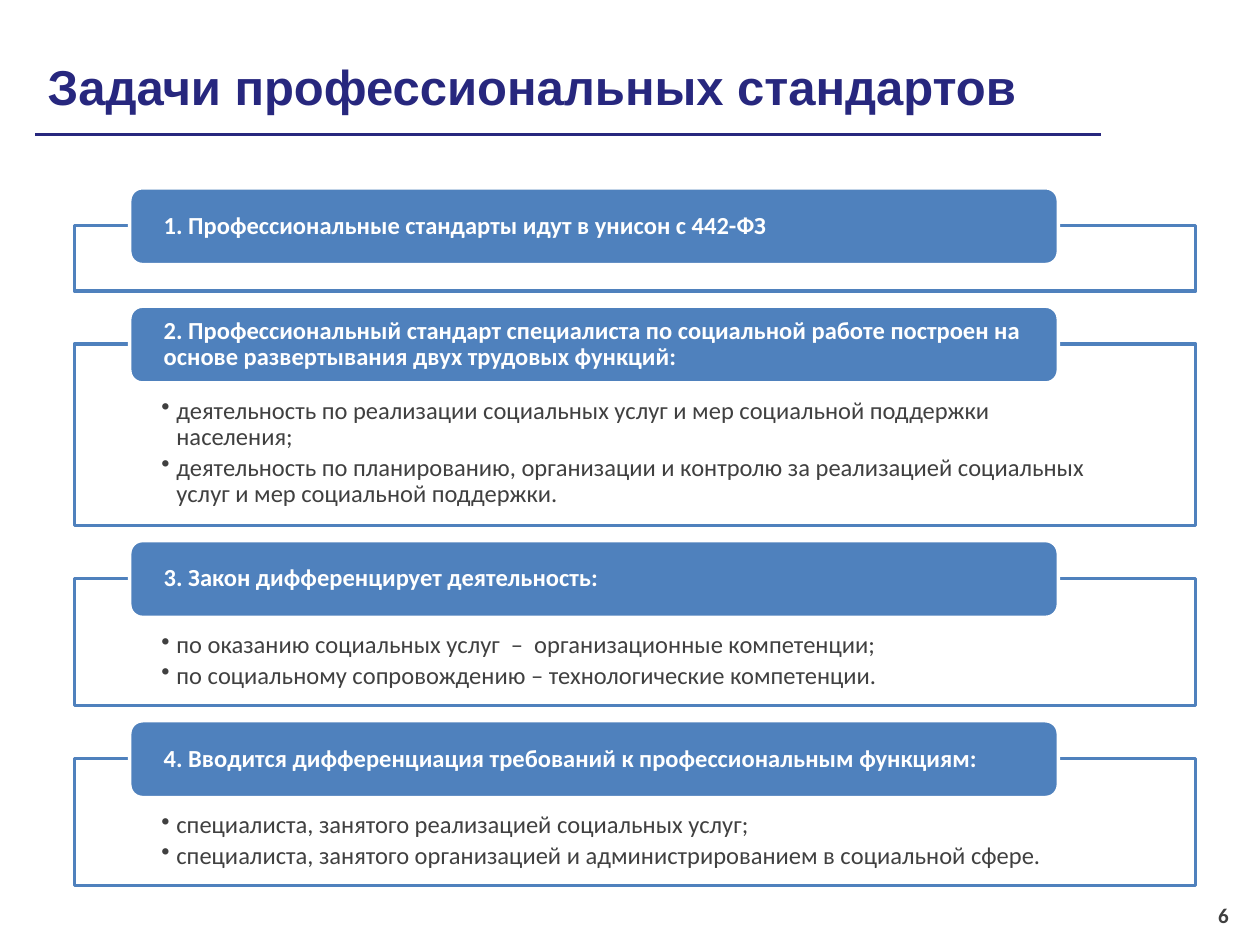
from lxml import etree
from pptx import Presentation
from pptx.dml.color import RGBColor
from pptx.enum.shapes import MSO_CONNECTOR, MSO_SHAPE
from pptx.enum.text import MSO_ANCHOR, PP_ALIGN
from pptx.oxml.ns import qn
from pptx.util import Inches, Pt

RECTANGLE, ROUNDED = MSO_SHAPE.RECTANGLE, MSO_SHAPE.ROUNDED_RECTANGLE
STRAIGHT = MSO_CONNECTOR.STRAIGHT
TOP, MIDDLE = MSO_ANCHOR.TOP, MSO_ANCHOR.MIDDLE
LEFT, RIGHT = PP_ALIGN.LEFT, PP_ALIGN.RIGHT

NAVY, BLUE, WHITE, GRAY = "27277E", "4F81BD", "FFFFFF", "404040"

FIRST_PANEL_TOP = 1.79
PANEL_GAP = 0.42
HEADING_RISE = 0.3

# Heading, bullets, panel height
TASKS = [
    ("1. Профессиональные стандарты идут в унисон с 442-ФЗ", [], 0.52),
    ("2. Профессиональный стандарт специалиста по социальной работе построен на "
     "основе развертывания двух трудовых функций:",
     ["деятельность по реализации социальных услуг и мер социальной поддержки "
      "населения;",
      "деятельность по планированию, организации и контролю за реализацией "
      "социальных услуг и мер социальной поддержки."], 1.44),
    ("3. Закон дифференцирует деятельность:",
     ["по оказанию социальных услуг  –  организационные компетенции;",
      "по социальному сопровождению – технологические компетенции."], 1.01),
    ("4. Вводится дифференциация требований к профессиональным функциям:",
     ["специалиста, занятого реализацией социальных услуг;",
      "специалиста, занятого организацией и администрированием в социальной "
      "сфере."], 1.01),
]


def color(hex_value):
    return RGBColor.from_string(hex_value)


def set_frame(frame, anchor, margins):
    """Wrap the text and set its anchor and left, top, right, bottom margins."""
    frame.word_wrap = True
    frame.vertical_anchor = anchor
    (frame.margin_left, frame.margin_top,
     frame.margin_right, frame.margin_bottom) = map(Inches, margins)


def write(paragraph, text, size, hex_value, bold=False, font="Calibri", align=LEFT):
    paragraph.alignment = align
    run = paragraph.add_run()
    run.text = text
    run.font.size = Pt(size)
    run.font.name = font
    run.font.bold = bold
    run.font.color.rgb = color(hex_value)


def add_bullet(paragraph):
    properties = paragraph._p.get_or_add_pPr()
    properties.set("marL", str(Inches(0.12)))
    properties.set("indent", str(-Inches(0.12)))
    etree.SubElement(properties, qn("a:buChar")).set("char", "•")


def add_label(slide, box, text, size, hex_value, **style):
    label = slide.shapes.add_textbox(*map(Inches, box))
    set_frame(label.text_frame, MIDDLE, (0.1, 0.05, 0.1, 0.05))
    write(label.text_frame.paragraphs[0], text, size, hex_value, bold=True, **style)


def add_title_rule(slide):
    rule = slide.shapes.add_connector(
        STRAIGHT, Inches(0.28), Inches(1.07), Inches(8.74), Inches(1.07))
    rule.line.color.rgb = color(NAVY)
    rule.line.width = Pt(1.5)
    etree.SubElement(rule._element.spPr, qn("a:effectLst"))


def add_block(slide, kind, box, fill, outline):
    block = slide.shapes.add_shape(kind, *map(Inches, box))
    block.shadow.inherit = False
    block.fill.solid()
    block.fill.fore_color.rgb = color(fill)
    block.line.color.rgb = color(outline)
    block.line.width = Pt(2)
    return block


def add_panel(slide, top, height, bullets):
    panel = add_block(slide, RECTANGLE, (0.59, top, 8.9, height), WHITE, BLUE)
    fill_color = panel._element.spPr.find(qn("a:solidFill"))[0]
    etree.SubElement(fill_color, qn("a:alpha")).set("val", "90000")
    frame = panel.text_frame
    set_frame(frame, TOP, (0.69, 0.43, 0.69, 0.11))
    for index, text in enumerate(bullets):
        paragraph = frame.add_paragraph() if index else frame.paragraphs[0]
        add_bullet(paragraph)
        paragraph.line_spacing = 0.9
        paragraph.space_after = Pt(2.3)
        write(paragraph, text, 14, GRAY)


def add_heading(slide, top, text):
    heading = add_block(slide, ROUNDED, (1.03, top, 7.37, 0.61), BLUE, WHITE)
    set_frame(heading.text_frame, MIDDLE, (0.24, 0, 0.24, 0))
    paragraph = heading.text_frame.paragraphs[0]
    paragraph.line_spacing = 0.9
    write(paragraph, text, 14, WHITE, bold=True)


def main():
    presentation = Presentation()
    presentation.slide_width = Inches(10)
    presentation.slide_height = Inches(7.5)
    slide = presentation.slides.add_slide(presentation.slide_layouts[6])

    add_title_rule(slide)
    add_label(slide, (0.28, 0.3, 8.46, 0.77), "Задачи профессиональных стандартов",
              28, NAVY, font="Arial")
    add_label(slide, (7.52, 7.06, 2.33, 0.4), "6", 12, GRAY, align=RIGHT)

    panel_top = FIRST_PANEL_TOP
    for heading, bullets, height in TASKS:
        add_panel(slide, panel_top, height, bullets)
        add_heading(slide, panel_top - HEADING_RISE, heading)
        panel_top += height + PANEL_GAP

    presentation.save("out.pptx")


if __name__ == "__main__":
    main()
